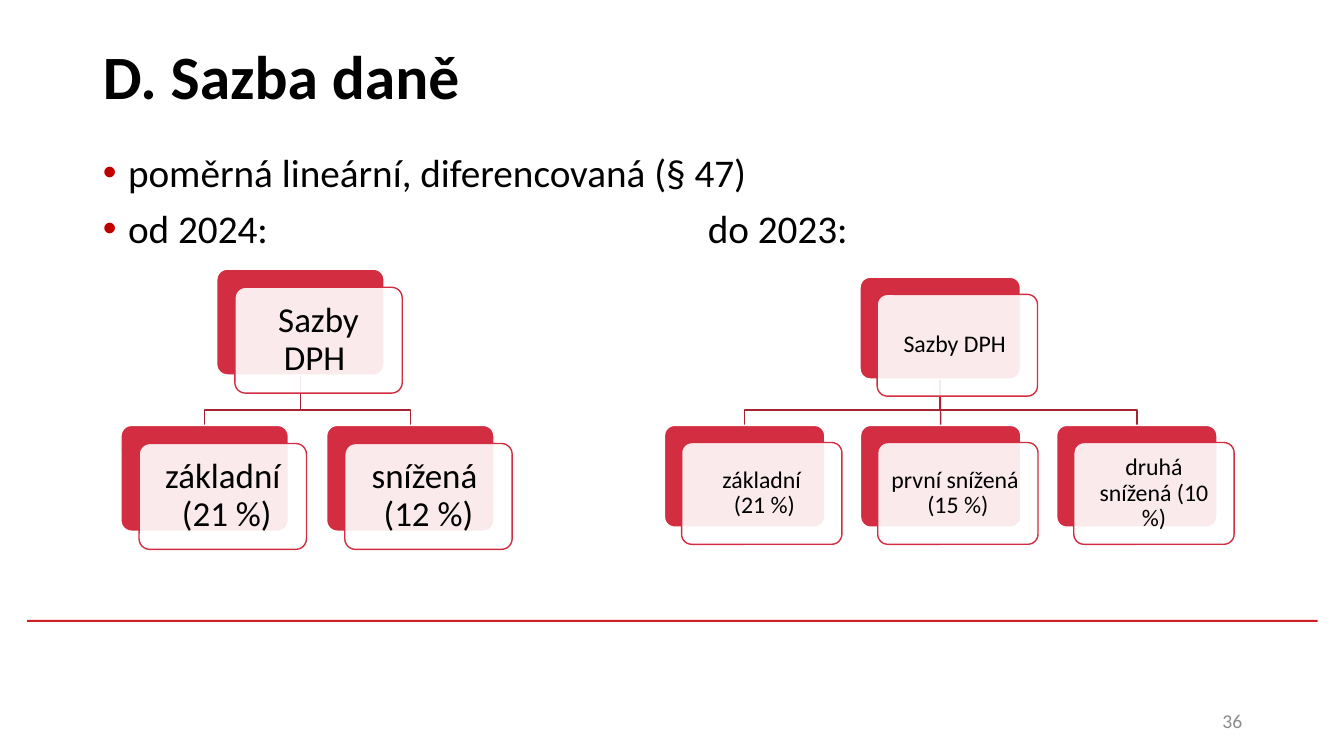
from lxml.etree import SubElement
from pptx import Presentation
from pptx.dml.color import RGBColor
from pptx.enum.shapes import MSO_CONNECTOR, MSO_SHAPE
from pptx.enum.text import MSO_ANCHOR, MSO_AUTO_SIZE, PP_ALIGN
from pptx.oxml.ns import qn
from pptx.util import Inches, Pt

BLACK = RGBColor(0x00, 0x00, 0x00)
WHITE = RGBColor(0xFF, 0xFF, 0xFF)
GREY = RGBColor(0x8C, 0x8C, 0x8C)
CARD_RED = RGBColor(0xD2, 0x2D, 0x40)
BRANCH_RED = RGBColor(0xA8, 0x24, 0x33)
RULE_RED = RGBColor(0xCD, 0x1F, 0x21)
BULLET_RED = RGBColor(0xC0, 0x00, 0x00)


def place(part, left, top, width, height):
    part.left, part.top = Inches(left), Inches(top)
    part.width, part.height = Inches(width), Inches(height)


def set_font(paragraph, size, color=BLACK, bold=False):
    paragraph.font.name = "Calibri"
    paragraph.font.size = Pt(size)
    paragraph.font.color.rgb = color
    paragraph.font.bold = bold


def add_title(slide, text, left, top, width, height):
    title = slide.shapes.title
    place(title, left, top, width, height)
    frame = title.text_frame
    frame.text = text
    frame.auto_size = MSO_AUTO_SIZE.NONE
    frame.vertical_anchor = MSO_ANCHOR.MIDDLE
    frame.paragraphs[0].alignment = PP_ALIGN.LEFT
    set_font(frame.paragraphs[0], 44, bold=True)


def add_bullets(slide, lines, left, top, width, height):
    body = slide.placeholders[1]
    place(body, left, top, width, height)
    frame = body.text_frame
    frame.text = "\n".join(lines)
    frame.auto_size = MSO_AUTO_SIZE.NONE
    for index, paragraph in enumerate(frame.paragraphs):
        paragraph.line_spacing = 0.9
        paragraph.space_before = Pt(10 if index else 0)
        properties = paragraph._p.get_or_add_pPr()
        properties.set("marL", str(Inches(0.25)))
        properties.set("indent", str(-Inches(0.25)))
        bullet_color = SubElement(properties, qn("a:buClr"))
        SubElement(bullet_color, qn("a:srgbClr"), val=str(BULLET_RED))
        SubElement(properties, qn("a:buFont"), typeface="Arial")
        SubElement(properties, qn("a:buChar"), char="•")
        tabs = SubElement(properties, qn("a:tabLst"))
        SubElement(tabs, qn("a:tab"), pos=str(Inches(6)), algn="l")
        set_font(paragraph, 28)


def add_branch(slide, root_x, root_bottom, leaf_x, leaf_top):
    if abs(root_x - leaf_x) < 0.01:
        branch = slide.shapes.add_connector(
            MSO_CONNECTOR.STRAIGHT, Inches(root_x), Inches(root_bottom),
            Inches(leaf_x), Inches(leaf_top))
        SubElement(branch._element.spPr, qn("a:effectLst"))
    else:
        bend = leaf_top - 0.15
        outline = slide.shapes.build_freeform(Inches(root_x), Inches(root_bottom))
        corners = [(root_x, bend), (leaf_x, bend), (leaf_x, leaf_top)]
        outline.add_line_segments(
            [(Inches(x), Inches(y)) for x, y in corners], close=False)
        branch = outline.convert_to_shape()
        branch.shadow.inherit = False
        branch.fill.background()
    branch.line.color.rgb = BRANCH_RED
    branch.line.width = Pt(1)


def add_panel(slide, left, top, width, height, fill, line):
    panel = slide.shapes.add_shape(
        MSO_SHAPE.ROUNDED_RECTANGLE, Inches(left), Inches(top),
        Inches(width), Inches(height))
    panel.adjustments[0] = 0.1
    panel.shadow.inherit = False
    panel.fill.solid()
    panel.fill.fore_color.rgb = fill
    panel.line.color.rgb = line
    panel.line.width = Pt(1)
    return panel


def add_card(slide, text, left, top, width, height, offset, size, inset):
    add_panel(slide, left, top, width, height, CARD_RED, WHITE)
    front = add_panel(slide, left + offset, top + offset, width, height, WHITE, CARD_RED)
    white = front._element.spPr.find(qn("a:solidFill")).find(qn("a:srgbClr"))
    SubElement(white, qn("a:alpha"), val="90000")
    frame = front.text_frame
    frame.text = text
    frame.word_wrap = True
    frame.vertical_anchor = MSO_ANCHOR.MIDDLE
    frame.margin_left = frame.margin_right = Inches(inset)
    frame.margin_top = frame.margin_bottom = Inches(inset)
    label = frame.paragraphs[0]
    label.alignment = PP_ALIGN.CENTER
    label.line_spacing = 0.9
    set_font(label, size)


def add_rate_tree(slide, rates, left, top, width, height, root_shift,
                  card_width, card_height, offset, size, inset):
    pitch = (width - offset - card_width) / (len(rates) - 1)
    root_left = left + root_shift
    leaf_top = top + height - offset - card_height
    leaf_lefts = [left + index * pitch for index in range(len(rates))]
    for leaf_left in leaf_lefts:
        add_branch(slide, root_left + card_width / 2, top + card_height,
                   leaf_left + card_width / 2, leaf_top)
    style = (card_width, card_height, offset, size, inset)
    add_card(slide, "Sazby DPH ", root_left, top, *style)
    for rate, leaf_left in zip(rates, leaf_lefts):
        add_card(slide, rate, leaf_left, leaf_top, *style)


def add_rule(slide, left, top, width, height):
    rule = slide.shapes.add_shape(
        MSO_SHAPE.RECTANGLE, Inches(left), Inches(top), Inches(width), Inches(height))
    rule.shadow.inherit = False
    rule.fill.solid()
    rule.fill.fore_color.rgb = RULE_RED
    rule.line.fill.background()


def add_page_number(slide, number, left, top, width, height):
    page_number = slide.shapes.add_textbox(
        Inches(left), Inches(top), Inches(width), Inches(height))
    frame = page_number.text_frame
    frame.text = number
    frame.word_wrap = True
    frame.vertical_anchor = MSO_ANCHOR.MIDDLE
    frame.paragraphs[0].alignment = PP_ALIGN.RIGHT
    set_font(frame.paragraphs[0], 14, GREY)


def main():
    presentation = Presentation()
    presentation.slide_width = Inches(13.33)
    presentation.slide_height = Inches(7.5)
    slide = presentation.slides.add_slide(presentation.slide_layouts[1])
    add_rule(slide, 0.27, 6.15, 12.8, 0.02)
    add_title(slide, "D. Sazba daně", 0.92, 0.02, 11.5, 1.45)
    add_bullets(slide, ["poměrná lineární, diferencovaná (§ 47)", "od 2024:\tdo 2023:"],
                0.92, 1.47, 11.5, 4.57)
    add_rate_tree(slide, ["základní\v (21 %)", "snížená \v(12 %)"],
                  1.2, 2.67, 3.88, 2.78, root_shift=0.95, card_width=1.66,
                  card_height=1.05, offset=0.18, size=25, inset=0.13)
    add_rate_tree(slide, ["základní\v (21 %)", "první snížená \v(15 %)", "druhá snížená (10 %)"],
                  6.59, 2.75, 5.65, 2.65, root_shift=1.94, card_width=1.59,
                  card_height=1.01, offset=0.17, size=17, inset=0.1)
    add_page_number(slide, "36", 9.42, 6.95, 3, 0.4)
    presentation.save("out.pptx")


if __name__ == "__main__":
    main()
